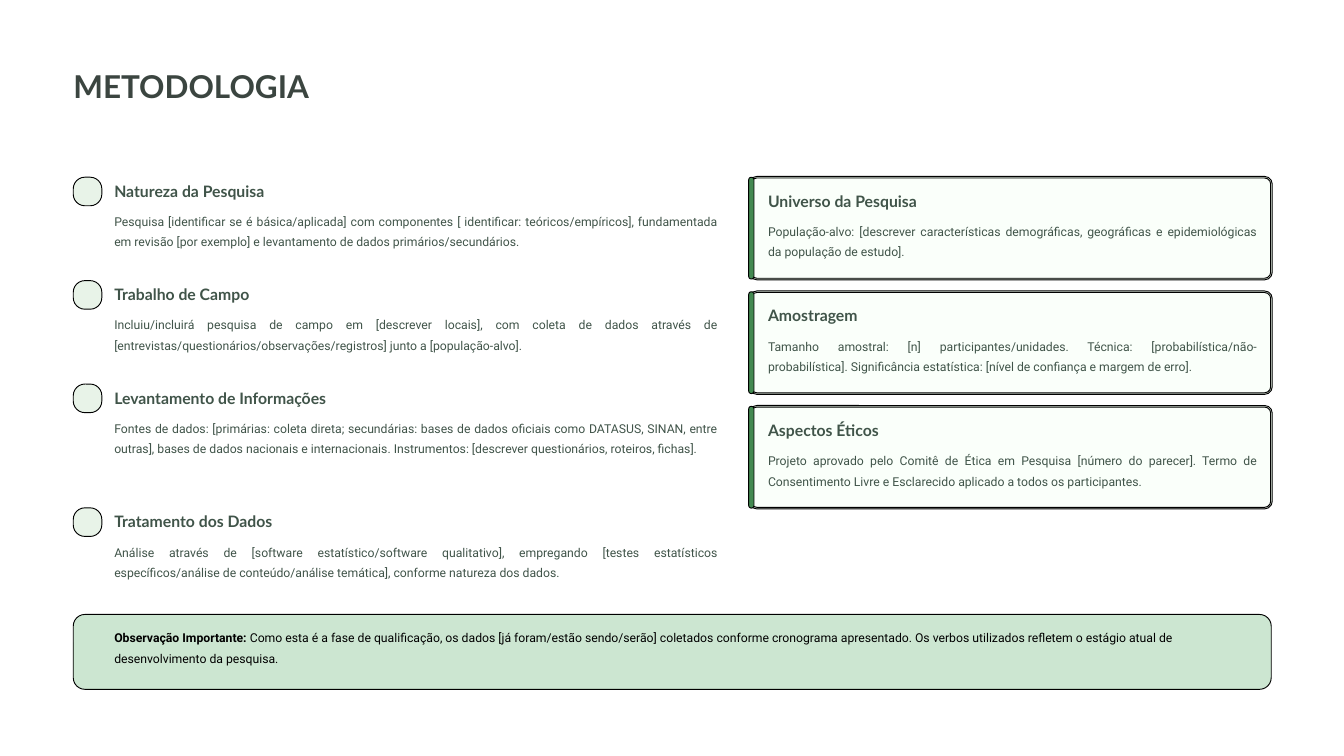
import pptx
import pptx.util
import pptx.dml.color
import pptx.enum.shapes
import pptx.enum.text
from dataclasses import dataclass

TITLE = "METODOLOGIA"

STEPS = [
    ("Natureza da Pesquisa", 2,
     "Pesquisa [identificar se é básica/aplicada] com componentes [ identificar: teóricos/empíricos], "
     "fundamentada em revisão [por exemplo] e levantamento de dados primários/secundários."),
    ("Trabalho de Campo", 2,
     "Incluiu/incluirá pesquisa de campo em [descrever locais], com coleta de dados através de "
     "[entrevistas/questionários/observações/registros] junto a [população-alvo]."),
    ("Levantamento de Informações", 3,
     "Fontes de dados: [primárias: coleta direta; secundárias: bases de dados oficiais como DATASUS, "
     "SINAN, entre outras], bases de dados nacionais e internacionais. Instrumentos: [descrever "
     "questionários, roteiros, fichas]."),
    ("Tratamento dos Dados", 2,
     "Análise através de [software estatístico/software qualitativo], empregando [testes estatísticos "
     "específicos/análise de conteúdo/análise temática], conforme natureza dos dados."),
]

CARDS = [
    ("Universo da Pesquisa",
     "População-alvo: [descrever características demográficas, geográficas e epidemiológicas da "
     "população de estudo]."),
    ("Amostragem",
     "Tamanho amostral: [n] participantes/unidades. Técnica: [probabilística/não-probabilística]. "
     "Significância estatística: [nível de confiança e margem de erro]."),
    ("Aspectos Éticos",
     "Projeto aprovado pelo Comitê de Ética em Pesquisa [número do parecer]. Termo de Consentimento "
     "Livre e Esclarecido aplicado a todos os participantes."),
]

NOTE = [
    ("Observação Importante:", True),
    (" Como esta é a fase de qualificação, os dados [já foram/estão sendo/serão] coletados conforme "
     "cronograma apresentado. Os verbos utilizados refletem o estágio atual de desenvolvimento da "
     "pesquisa.", False),
]


@dataclass(frozen=True)
class TextStyle:
    font: str
    size: float
    leading: float
    color: str
    bold: bool = False
    align: pptx.enum.text.PP_ALIGN = pptx.enum.text.PP_ALIGN.LEFT


@dataclass(frozen=True)
class Theme:
    title: TextStyle = TextStyle("Lato", 33.7, 42.5, "3B4540", True)
    heading: TextStyle = TextStyle("Lato", 16.9, 21.2, "405449", True)
    body: TextStyle = TextStyle("Roboto", 13.1, 21.9, "405449",
                                align=pptx.enum.text.PP_ALIGN.JUSTIFY)
    note: TextStyle = TextStyle("Roboto", 13.1, 21.9, "000000")
    outline: str = "000000"
    marker: str = "E8F3E8"
    card: str = "FAFFFA"
    card_border: str = "CED9CE"
    accent: str = "438951"
    note_fill: str = "CCE6D1"


THEME = Theme()
Cm = pptx.util.Cm

MARGIN = 2.77
CONTENT_TOP = 6.7
LINE = 0.77
HEADING_HEIGHT = 0.79
BODY_OFFSET = 1.05
MARKER = 1.08
STEP_TEXT_LEFT, STEP_TEXT_WIDTH = 4.32, 22.81
STEP_OVERHEAD = 2.37
CARD_LEFT, CARD_WIDTH, CARD_HEIGHT = 28.35, 19.71, 3.85
CARD_PITCH = 4.33
CARD_TEXT_LEFT, CARD_TEXT_WIDTH = 29.03, 18.49
BORDER = 0.03
NOTE_TOP, NOTE_WIDTH, NOTE_HEIGHT = 23.23, 45.28, 2.83


def rgb(color):
    return pptx.dml.color.RGBColor.from_string(color)


def add_panel(slide, left, top, width, height, radius, fill):
    panel = slide.shapes.add_shape(
        pptx.enum.shapes.MSO_SHAPE.ROUNDED_RECTANGLE, Cm(left), Cm(top), Cm(width), Cm(height))
    panel.adjustments[0] = min(0.5, radius / min(width, height))
    panel.shadow.inherit = False
    panel.fill.solid()
    panel.fill.fore_color.rgb = rgb(fill)
    panel.line.color.rgb = rgb(THEME.outline)
    panel.line.width = pptx.util.Pt(1)


def write(frame, runs, style):
    frame.word_wrap = True
    frame.auto_size = pptx.enum.text.MSO_AUTO_SIZE.NONE
    frame.vertical_anchor = pptx.enum.text.MSO_ANCHOR.TOP
    frame.margin_left = frame.margin_right = frame.margin_top = frame.margin_bottom = 0
    paragraph = frame.paragraphs[0]
    paragraph.alignment = style.align
    paragraph.line_spacing = pptx.util.Pt(style.leading)
    paragraph.space_before = pptx.util.Pt(0)
    for text, bold in runs:
        run = paragraph.add_run()
        run.text = text
        run.font.name = style.font
        run.font.size = pptx.util.Pt(style.size)
        run.font.bold = bold
        run.font.color.rgb = rgb(style.color)


def add_text(slide, left, top, width, height, runs, style):
    box = slide.shapes.add_textbox(Cm(left), Cm(top), Cm(width), Cm(height))
    write(box.text_frame, runs, style)


def add_topic(slide, left, top, width, heading, body, lines=2):
    add_text(slide, left, top, width, HEADING_HEIGHT, [(heading, True)], THEME.heading)
    add_text(slide, left, top + BODY_OFFSET, width, lines * LINE, [(body, False)], THEME.body)


def add_steps(slide):
    top = CONTENT_TOP
    for heading, lines, body in STEPS:
        add_panel(slide, MARGIN, top, MARKER, MARKER, 0.44, THEME.marker)
        add_topic(slide, STEP_TEXT_LEFT, top + 0.13, STEP_TEXT_WIDTH, heading, body, lines)
        top += STEP_OVERHEAD + lines * LINE


def add_cards(slide):
    for index, (heading, body) in enumerate(CARDS):
        top = CONTENT_TOP + index * CARD_PITCH
        for grow, fill in ((BORDER, THEME.card_border), (-BORDER, THEME.card)):
            add_panel(slide, CARD_LEFT - grow, top - grow, CARD_WIDTH + 2 * grow,
                      CARD_HEIGHT + 2 * grow, 0.26 + grow, fill)
        add_panel(slide, 28.3, top, 0.2, CARD_HEIGHT, 0.1, THEME.accent)
        add_topic(slide, CARD_TEXT_LEFT, top + 0.51, CARD_TEXT_WIDTH, heading, body)


def main():
    deck = pptx.Presentation()
    deck.slide_width, deck.slide_height = Cm(50.8), Cm(28.58)
    slide = deck.slides.add_slide(deck.slide_layouts[5])

    title = slide.shapes.title
    title.left, title.top, title.width, title.height = Cm(MARGIN), Cm(2.46), Cm(12.07), Cm(1.55)
    write(title.text_frame, [(TITLE, True)], THEME.title)

    add_steps(slide)
    add_cards(slide)
    add_panel(slide, MARGIN, NOTE_TOP, NOTE_WIDTH, NOTE_HEIGHT, 0.44, THEME.note_fill)
    add_text(slide, STEP_TEXT_LEFT, 23.62, 43.23, 1.75, NOTE, THEME.note)
    deck.save("out.pptx")


if __name__ == "__main__":
    main()
